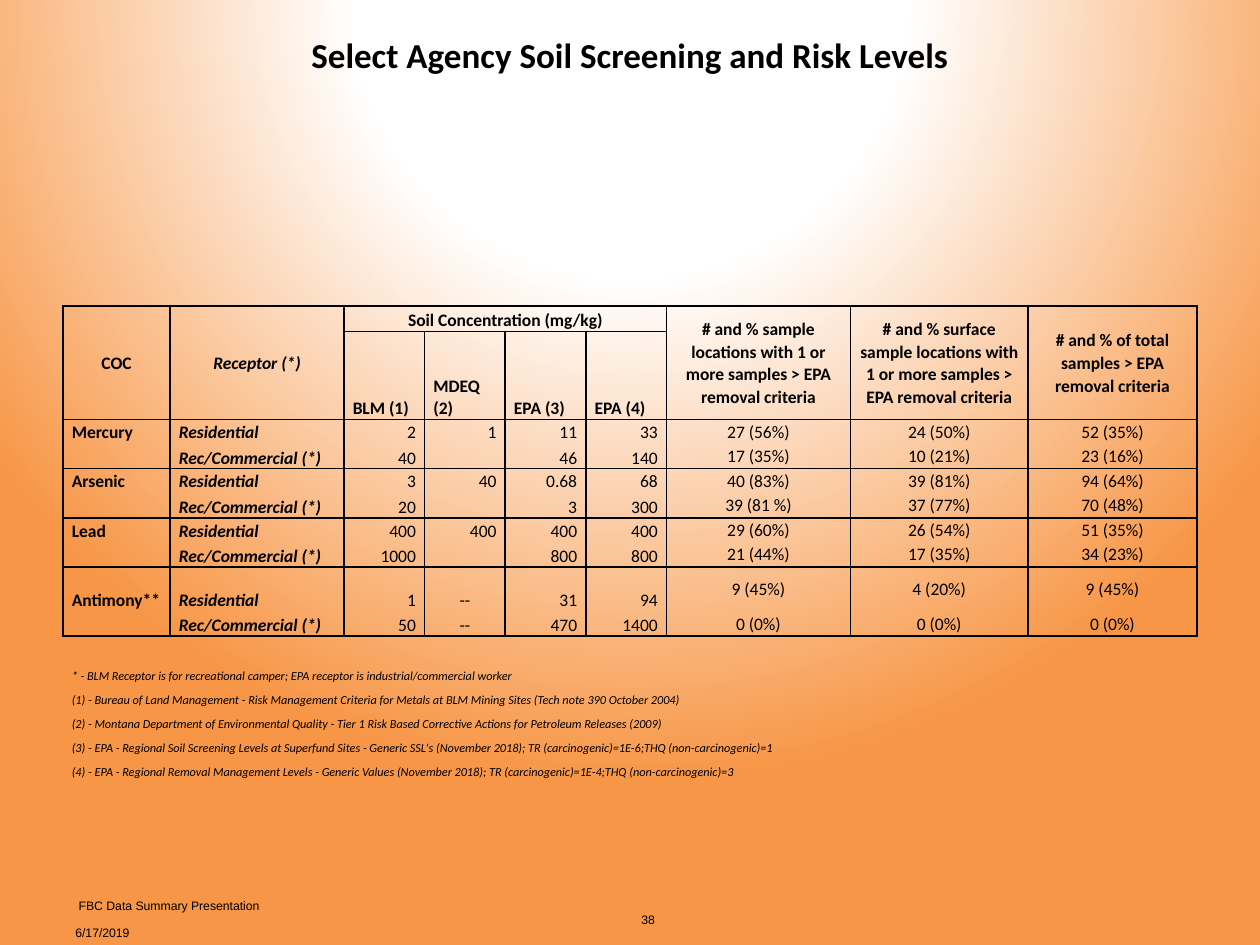
from lxml.etree import SubElement
from pptx import Presentation
from pptx.dml.color import RGBColor
from pptx.enum.text import MSO_ANCHOR, PP_ALIGN
from pptx.oxml import parse_xml
from pptx.oxml.ns import nsdecls, qn
from pptx.util import Inches, Pt

COLORS = {"ink": "000000", "light": "FFFFFF", "orange": "F79646"}
NO_STYLE = "{2D5ABB26-0587-4C30-8999-92F81FD0307C}"
COLUMN_WIDTHS = [0.85, 1.38] + [0.64] * 4 + [1.46, 1.41, 1.34]
ROW_HEIGHTS = [0.2, 0.2, 0.7] + [0.19, 0.2] * 3 + [0.35, 0.2] + [0.19] * 6
AGENCIES = ["BLM (1)", "MDEQ (2)", "EPA (3)", "EPA (4)"]
TALL_HEADINGS = {
    0: "COC",
    1: "Receptor (*)",
    6: "# and % sample locations with 1 or more samples > EPA removal criteria",
    7: "# and % surface sample locations with 1 or more samples > EPA removal criteria",
    8: "# and % of total samples > EPA removal criteria",
}
CONTAMINANTS = {
    "Mercury": (["2", "1", "11", "33", "27 (56%)", "24 (50%)", "52 (35%)"],
                ["40", "", "46", "140", "17 (35%)", "10 (21%)", "23 (16%)"]),
    "Arsenic": (["3", "40", "0.68", "68", "40 (83%)", "39 (81%)", "94 (64%)"],
                ["20", "", "3", "300", "39 (81 %)", "37 (77%)", "70 (48%)"]),
    "Lead": (["400", "400", "400", "400", "29 (60%)", "26 (54%)", "51 (35%)"],
             ["1000", "", "800", "800", "21 (44%)", "17 (35%)", "34 (23%)"]),
    "Antimony**": (["1", "--", "31", "94", "9 (45%)", "4 (20%)", "9 (45%)"],
                   ["50", "--", "470", "1400", "0 (0%)", "0 (0%)", "0 (0%)"]),
}
FOOTNOTES = [
    ("* - BLM Receptor is for recreational camper; EPA receptor is industrial/commercial worker", 5),
    ("(1) - Bureau of Land Management - Risk Management Criteria for Metals at BLM Mining Sites "
     "(Tech note 390 October 2004)", 7),
    ("(2) - Montana Department of Environmental Quality - Tier 1 Risk Based Corrective Actions "
     "for Petroleum Releases (2009)", 7),
    ("(3) - EPA - Regional Soil Screening Levels at Superfund Sites - Generic SSL's "
     "(November 2018); TR (carcinogenic)=1E-6;THQ (non-carcinogenic)=1", 8),
    ("(4) - EPA - Regional Removal Management Levels - Generic Values (November 2018); "
     "TR (carcinogenic)=1E-4;THQ (non-carcinogenic)=3", 7),
]


def write_text(frame, text, size=10, font="Calibri", bold=False, italic=False,
               align=PP_ALIGN.LEFT, spacing=None):
    """Write one formatted paragraph into a text frame."""
    para = frame.paragraphs[0]
    para.alignment = align
    if spacing:
        para.line_spacing = spacing
    if not text:
        SubElement(para._p, qn("a:endParaRPr"), sz=str(size * 100))
        return
    span = para.add_run()
    span.text = text
    span.font.size = Pt(size)
    span.font.name = font
    span.font.bold = bold
    span.font.italic = italic
    span.font.color.rgb = RGBColor.from_string(COLORS["ink"])


def fill_cell(cell, text="", anchor=MSO_ANCHOR.BOTTOM, **style):
    """Write text into a table cell with the table's margins."""
    cell.margin_left = cell.margin_right = Inches(0.07)
    cell.margin_top = cell.margin_bottom = 0
    cell.vertical_anchor = anchor
    write_text(cell.text_frame, text, spacing=1.07, **style)


def draw_borders(cell, sides):
    """Clear the cell fill and rule the sides named by the letters L, R, T and B."""
    cell.fill.background()
    properties = cell._tc.get_or_add_tcPr()
    for index, side in enumerate("LRTB"):
        paint = (f'<a:solidFill><a:srgbClr val="{COLORS["ink"]}"/></a:solidFill>'
                 if side in sides else "<a:noFill/>")
        properties.insert(index, parse_xml(
            f'<a:ln{side} {nsdecls("a")} w="12700">{paint}</a:ln{side}>'))


def paint_background(page):
    """Give the page a circular gradient from light to orange."""
    stops = "".join(f'<a:gs pos="{position}000"><a:srgbClr val="{COLORS[name]}"/></a:gs>'
                    for position, name in [(0, "light"), (35, "light"), (100, "orange")])
    page.element.cSld.insert(0, parse_xml(
        f'<p:bg {nsdecls("p", "a")}><p:bgPr><a:gradFill rotWithShape="1">'
        f'<a:gsLst>{stops}</a:gsLst><a:path path="circle">'
        '<a:fillToRect l="50000" t="-80000" r="50000" b="180000"/></a:path>'
        '</a:gradFill><a:effectLst/></p:bgPr></p:bg>'))


def add_title(page, left, top, width, height):
    """Place the title placeholder in the given box."""
    title = page.shapes.title
    title.left, title.top, title.width, title.height = map(Inches, (left, top, width, height))
    title.text_frame.vertical_anchor = MSO_ANCHOR.MIDDLE
    write_text(title.text_frame, "Select Agency Soil Screening and Risk Levels",
               size=20, bold=True, align=PP_ALIGN.CENTER)


def add_footer(page, text, left, top, width, height, align=PP_ALIGN.LEFT):
    """Place one small footer text in the given box."""
    box = page.shapes.add_textbox(*map(Inches, (left, top, width, height)))
    box.text_frame.word_wrap = True
    box.text_frame.vertical_anchor = MSO_ANCHOR.MIDDLE
    write_text(box.text_frame, text, size=7, font="Arial", align=align)


def fill_headings(table):
    """Write the two heading rows and merge their cells."""
    heading = {"bold": True, "align": PP_ALIGN.CENTER}
    for column, text in TALL_HEADINGS.items():
        table.cell(1, column).merge(table.cell(2, column))
        fill_cell(table.cell(1, column), text, MSO_ANCHOR.MIDDLE, italic=column == 1, **heading)
    table.cell(1, 2).merge(table.cell(1, 5))
    fill_cell(table.cell(1, 2), "Soil Concentration (mg/kg)", **heading)
    for column, text in enumerate(AGENCIES, 2):
        fill_cell(table.cell(2, column), text, bold=True)


def fill_contaminants(table, first_row):
    """Write a residential and a commercial row for each contaminant."""
    for index, (name, levels) in enumerate(CONTAMINANTS.items()):
        receptors = [(name, "Residential"), ("", "Rec/Commercial (*)")]
        for offset, (labels, values) in enumerate(zip(receptors, levels)):
            row = first_row + 2 * index + offset
            for column, text in enumerate(labels):
                fill_cell(table.cell(row, column), text, bold=True, italic=column == 1)
            for column, text in enumerate(values, 2):
                counted = column > 5
                centered = counted or text == "--"
                fill_cell(table.cell(row, column), text,
                          MSO_ANCHOR.MIDDLE if counted else MSO_ANCHOR.BOTTOM,
                          align=PP_ALIGN.CENTER if centered else PP_ALIGN.RIGHT)


def fill_footnotes(table, first_row):
    """Write each footnote across the columns it spans."""
    for row, (text, columns) in enumerate(FOOTNOTES, first_row):
        table.cell(row, 0).merge(table.cell(row, columns - 1))
        fill_cell(table.cell(row, 0), text, size=7, bold=True and False, italic=True)
        for column in range(columns, len(COLUMN_WIDTHS)):
            fill_cell(table.cell(row, column), size=7)


def add_levels_table(page, left, top, width, height):
    """Place the table of screening levels in the given box."""
    frame = page.shapes.add_table(len(ROW_HEIGHTS), len(COLUMN_WIDTHS),
                                  *map(Inches, (left, top, width, height)))
    table = frame.table
    table.first_row = table.horz_banding = False
    next(table._tbl.iter(qn("a:tableStyleId"))).text = NO_STYLE
    for column, size in zip(table.columns, COLUMN_WIDTHS):
        column.width = Inches(size)
    for row, size in zip(table.rows, ROW_HEIGHTS):
        row.height = Inches(size)
    fill_headings(table)
    fill_contaminants(table, 3)
    fill_footnotes(table, 12)
    row_sides = ["B", "LRTB", "LRTB"] + ["LRT", "LRB"] * len(CONTAMINANTS) + ["T"] + [""] * 5
    for row, sides in enumerate(row_sides):
        for column in range(len(COLUMN_WIDTHS)):
            if row in (0, 11):
                fill_cell(table.cell(row, column))
            draw_borders(table.cell(row, column), sides)


def main():
    """Build the slide and save the deck."""
    deck = Presentation()
    deck.slide_width, deck.slide_height = Inches(10), Inches(7.5)
    page = deck.slides.add_slide(deck.slide_layouts[5])
    paint_background(page)
    add_footer(page, "38", 3.98, 7.1, 2.33, 0.4, align=PP_ALIGN.CENTER)
    add_footer(page, "6/17/2019", 0.5, 7.29, 2.33, 0.22)
    add_footer(page, " FBC Data Summary Presentation", 0.5, 7.07, 3.17, 0.23)
    add_title(page, 0, -0.19, 10, 1.25)
    add_levels_table(page, 0.5, 2.23, 9, 3.99)
    deck.save("out.pptx")


if __name__ == "__main__":
    main()
